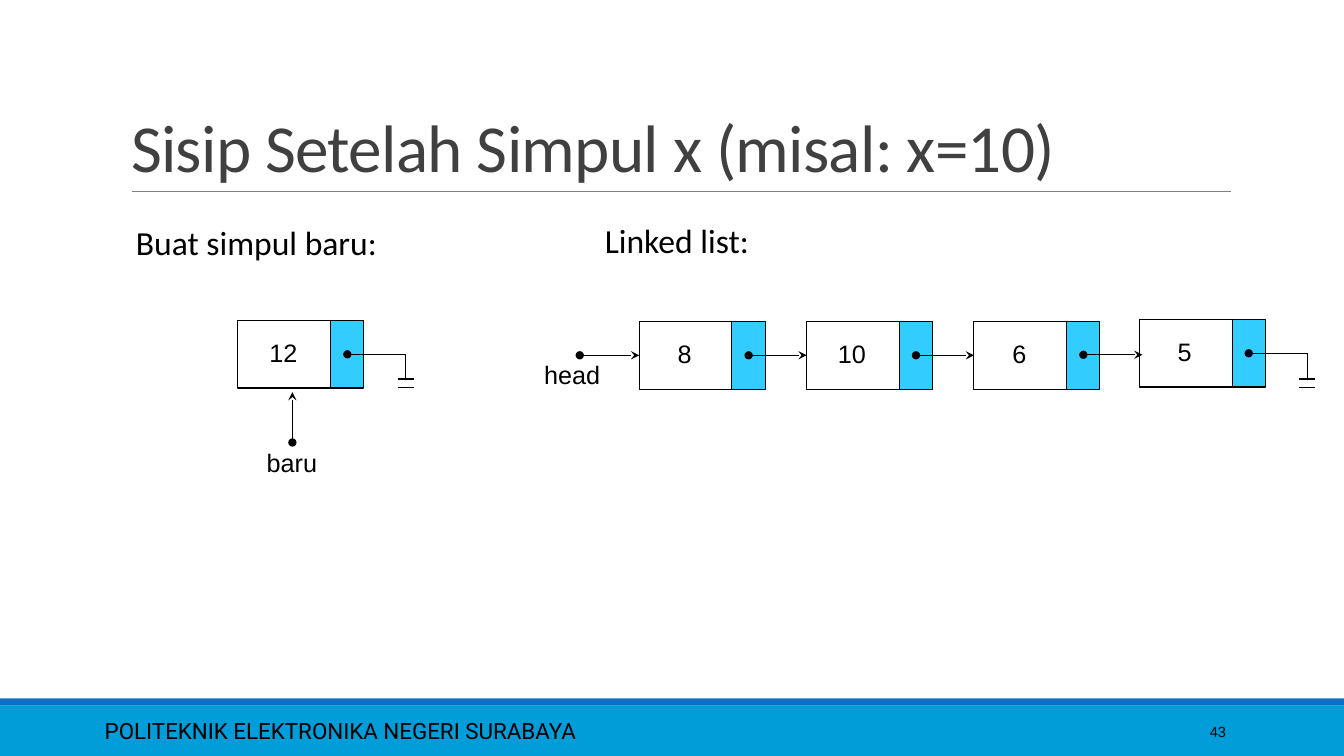
"""Build the slide on inserting a node after node x in a linked list."""
from dataclasses import dataclass

from lxml import etree
from pptx import Presentation
from pptx.dml.color import RGBColor
from pptx.enum.shapes import MSO_CONNECTOR, MSO_SHAPE
from pptx.enum.text import MSO_ANCHOR, MSO_AUTO_SIZE, PP_ALIGN
from pptx.oxml.ns import qn
from pptx.shapes.autoshape import Shape
from pptx.shapes.connector import Connector
from pptx.slide import Slide
from pptx.text.text import TextFrame
from pptx.util import Inches, Pt

RECT = MSO_SHAPE.RECTANGLE
LINE = MSO_CONNECTOR.STRAIGHT
LEFT, CENTER, RIGHT = PP_ALIGN.LEFT, PP_ALIGN.CENTER, PP_ALIGN.RIGHT
TOP, MIDDLE, BOTTOM = MSO_ANCHOR.TOP, MSO_ANCHOR.MIDDLE, MSO_ANCHOR.BOTTOM
NO_FIT, GROW = MSO_AUTO_SIZE.NONE, MSO_AUTO_SIZE.SHAPE_TO_FIT_TEXT

BLACK = "000000"
DATA_W, PTR_W, CELL_H = 0.92, 0.33, 0.67
DOT_X = DATA_W + PTR_W / 2


@dataclass
class Label:
    """Text with its place and format."""
    text: str
    x: float
    y: float
    w: float
    h: float
    size: float = 18
    font: str = "Arial"
    color: str = BLACK
    align: PP_ALIGN = CENTER
    anchor: MSO_ANCHOR = TOP
    fit: MSO_AUTO_SIZE = GROW


@dataclass
class Node:
    """List node with a value and its top left corner."""
    value: str
    x: float
    y: float

    @property
    def mid(self) -> float:
        """Height of the node's centre line."""
        return self.y + CELL_H / 2

    @property
    def dot(self) -> float:
        """Centre of the pointer cell."""
        return self.x + DOT_X


TITLE = Label("Sisip Setelah Simpul x (misal: x=10)", 1.2, 0.31, 11, 1.59,
              48, "Calibri", "404040", LEFT, BOTTOM, NO_FIT)
LABELS = [
    Label("POLITEKNIK ELEKTRONIKA NEGERI SURABAYA", 0.94, 7.05, 8.41, 0.4,
          16, "Roboto", align=LEFT, anchor=MIDDLE, fit=NO_FIT),
    Label("43", 10.83, 7.06, 1.43, 0.4, 10.5, align=RIGHT, anchor=MIDDLE,
          fit=NO_FIT),
    Label("Buat simpul baru:", 1.25, 2.15, 2.65, 0.5, 24, "Calibri",
          align=LEFT),
    Label("Linked list:", 5.9, 2.13, 2.58, 0.5, 24, "Calibri", align=LEFT),
    Label("baru", 2.31, 4.39, 1.17, 0.4),
    Label("head", 5.09, 3.52, 1.17, 0.4),
]
FRESH = Node("12", 2.36, 3.18)
CHAIN = [Node("8", 6.34, 3.19), Node("10", 8, 3.19), Node("6", 9.66, 3.19)]
LAST = Node("5", 11.3, 3.17)


def rgb(code: str) -> RGBColor:
    """Turn a hex string into a colour."""
    return RGBColor.from_string(code)


def write(frame: TextFrame, label: Label) -> None:
    """Fill a text frame with a formatted label."""
    frame.word_wrap = True
    frame.auto_size = label.fit
    frame.vertical_anchor = label.anchor
    para = frame.paragraphs[0]
    para.alignment = label.align
    run = para.add_run()
    run.text = label.text
    run.font.size = Pt(label.size)
    run.font.name = label.font
    run.font.color.rgb = rgb(label.color)


def add_text(slide: Slide, label: Label) -> None:
    """Add a text box for a label."""
    box = slide.shapes.add_textbox(Inches(label.x), Inches(label.y),
                                   Inches(label.w), Inches(label.h))
    write(box.text_frame, label)


def add_title(slide: Slide) -> None:
    """Place and format the title."""
    title = slide.shapes.title
    title.left, title.top = Inches(TITLE.x), Inches(TITLE.y)
    title.width, title.height = Inches(TITLE.w), Inches(TITLE.h)
    write(title.text_frame, TITLE)
    para = title.text_frame.paragraphs[0]
    para.line_spacing = 0.85
    para.runs[0]._r.get_or_add_rPr().set("spc", "-50")


def add_rect(slide: Slide, x: float, y: float, w: float, h: float,
             fill: str = "", edge: str = "") -> Shape:
    """Add a rectangle with an optional fill and edge."""
    rect = slide.shapes.add_shape(RECT, Inches(x), Inches(y),
                                  Inches(w), Inches(h))
    rect.shadow.inherit = False
    if fill:
        rect.fill.solid()
        rect.fill.fore_color.rgb = rgb(fill)
    else:
        rect.fill.background()
    if edge:
        rect.line.color.rgb = rgb(edge)
        rect.line.width = Pt(0.75)
    else:
        rect.line.fill.background()
    return rect


def add_line(slide: Slide, x1: float, y1: float, x2: float, y2: float,
             dot: bool = False, tip: bool = False, color: str = BLACK,
             width: float = 0.75) -> Connector:
    """Add a line, with a dot at its start or a tip at its end if asked."""
    line = slide.shapes.add_connector(LINE, Inches(x1), Inches(y1),
                                      Inches(x2), Inches(y2))
    line.line.color.rgb = rgb(color)
    line.line.width = Pt(width)
    stroke = line.line._get_or_add_ln()
    if dot:
        etree.SubElement(stroke, qn("a:headEnd"), type="oval")
    if tip:
        etree.SubElement(stroke, qn("a:tailEnd"), type="stealth")
    etree.SubElement(line._element.spPr, qn("a:effectLst"))
    return line


def add_node(slide: Slide, node: Node) -> Shape:
    """Draw a node and return its data cell."""
    cell = add_rect(slide, node.x, node.y, DATA_W, CELL_H, edge=BLACK)
    add_rect(slide, node.x + DATA_W, node.y, PTR_W, CELL_H, "33CCFF", BLACK)
    add_text(slide, Label(node.value, node.x + 0.2, node.y + 0.12, 0.5, 0.4))
    return cell


def add_null(slide: Slide, node: Node) -> None:
    """Draw the ground sign that ends a list."""
    x, y = node.dot + 0.58, 3.76
    add_line(slide, node.dot, node.mid, x, node.mid, dot=True)
    add_line(slide, x, node.mid, x, y)
    for bar in (y, y + 0.08):
        add_line(slide, x - 0.08, bar, x + 0.08, bar)


def add_chain(slide: Slide) -> None:
    """Draw the linked list from head to its last node."""
    start = 5.75
    for node in CHAIN:
        cell = add_node(slide, node)
        link = add_line(slide, start, node.mid, node.x, node.mid, True, True)
        link.end_connect(cell, 1)
        start = node.dot
    add_node(slide, LAST)
    add_line(slide, start, 3.52, LAST.x + 0.03, 3.52, True, True)
    add_null(slide, LAST)


def main() -> None:
    """Build and save the slide."""
    deck = Presentation()
    deck.slide_width, deck.slide_height = Inches(13.33), Inches(7.5)
    slide = deck.slides.add_slide(deck.slide_layouts[5])
    add_rect(slide, 0, 7, 13.33, 0.5, "009DD9")
    add_rect(slide, 0, 6.93, 13.33, 0.07, "0F6FC6")
    add_line(slide, 1.31, 1.9, 12.21, 1.9, color="808080", width=0.5)
    add_title(slide)
    for label in LABELS:
        add_text(slide, label)
    add_node(slide, FRESH)
    add_null(slide, FRESH)
    add_line(slide, 2.9, 4.39, 2.9, 3.89, True, True)
    add_chain(slide)
    deck.save("out.pptx")


if __name__ == "__main__":
    main()
